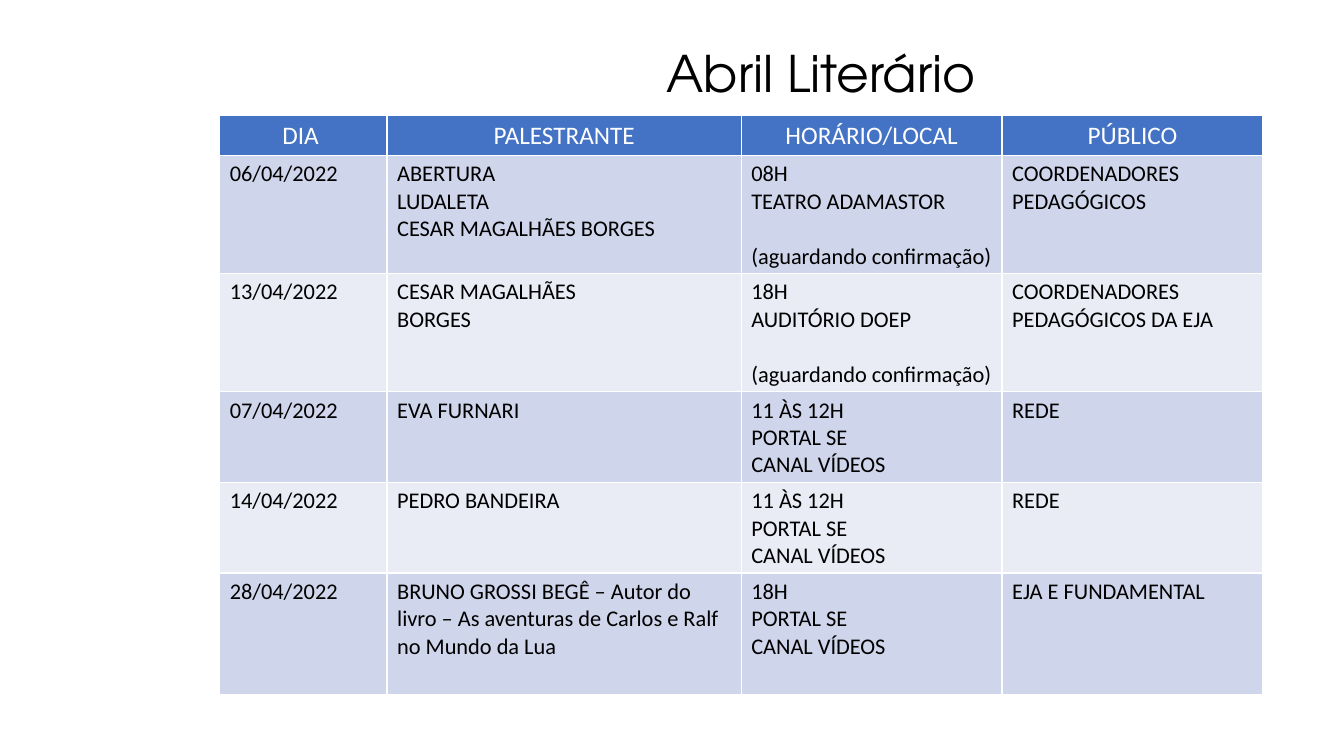
from dataclasses import dataclass

from lxml.etree import SubElement
from pptx import Presentation
from pptx.dml.color import RGBColor
from pptx.enum.text import MSO_ANCHOR, PP_ALIGN
from pptx.oxml.ns import qn
from pptx.util import Pt


@dataclass(frozen=True)
class Theme:
    title_font: str = "TeX Gyre Adventor"
    table_font: str = "Calibri"
    title_size: float = 36
    header_size: float = 18
    body_size: float = 16
    line_height: float = 19.5
    border_width: float = 1
    text: str = "000000"
    white: str = "FFFFFF"
    header_fill: str = "4472C4"
    band_fills: tuple = ("CFD5EA", "E9EBF5")


theme = Theme()


def add_text(paragraph, text, font_name, size, color):
    run = paragraph.add_run()
    run.text = text
    run.font.name = font_name
    run.font.size = Pt(size)
    run.font.bold = False
    run.font.color.rgb = RGBColor.from_string(color)


def set_borders(cell, color, width):
    properties = cell._tc.get_or_add_tcPr()
    for tag in ("a:lnL", "a:lnR", "a:lnT", "a:lnB"):
        line = SubElement(properties, qn(tag), w=str(Pt(width)))
        fill = SubElement(line, qn("a:solidFill"))
        SubElement(fill, qn("a:srgbClr"), val=color)


presentation = Presentation()
presentation.slide_width = Pt(960)
presentation.slide_height = Pt(540)
slide = presentation.slides.add_slide(presentation.slide_layouts[6])

# Title
title = slide.shapes.add_textbox(Pt(437), Pt(26.6), Pt(299), Pt(51))
title.text_frame.word_wrap = True
paragraph = title.text_frame.paragraphs[0]
paragraph.alignment = PP_ALIGN.CENTER
add_text(paragraph, "Abril Literário", theme.title_font, theme.title_size, theme.text)

# Schedule: each cell is a list of paragraphs
pending = "(aguardando confirmação)"
online = ["PORTAL SE", "CANAL VÍDEOS"]
schedule = [
    [["DIA "], ["PALESTRANTE"], ["HORÁRIO/LOCAL"], ["PÚBLICO"]],
    [["06/04/2022"], ["ABERTURA", "LUDALETA", "CESAR MAGALHÃES BORGES"],
     ["08H", "TEATRO ADAMASTOR", pending], ["COORDENADORES", "PEDAGÓGICOS"]],
    [["13/04/2022"], ["CESAR MAGALHÃES", "BORGES"],
     ["18H", "AUDITÓRIO DOEP", pending], ["COORDENADORES PEDAGÓGICOS DA EJA"]],
    [["07/04/2022"], ["EVA FURNARI"], ["11 ÀS 12H", *online], ["REDE"]],
    [["14/04/2022"], ["PEDRO BANDEIRA"], ["11 ÀS 12H", *online], ["REDE"]],
    [["28/04/2022"],
     ["BRUNO GROSSI BEGÊ – Autor do livro – As aventuras de Carlos e Ralf no Mundo da Lua"],
     ["18H", *online], ["EJA E FUNDAMENTAL"]],
]
column_widths = [119.5, 253, 186.3, 186.3]
row_heights = [28, 84, 84, 64.8, 64.8, 87]

# Table grid
table = slide.shapes.add_table(
    len(row_heights), len(column_widths), Pt(157), Pt(82.3),
    Pt(sum(column_widths)), Pt(sum(row_heights))).table
for column, width in zip(table.columns, column_widths):
    column.width = Pt(width)
for row, height in zip(table.rows, row_heights):
    row.height = Pt(height)

# Table cells
for row_index, row_texts in enumerate(schedule):
    is_header = row_index == 0
    fill = theme.header_fill if is_header else theme.band_fills[(row_index - 1) % 2]
    size = theme.header_size if is_header else theme.body_size
    color = theme.white if is_header else theme.text
    for column_index, lines in enumerate(row_texts):
        cell = table.cell(row_index, column_index)
        set_borders(cell, theme.white, theme.border_width)
        cell.fill.solid()
        cell.fill.fore_color.rgb = RGBColor.from_string(fill)
        cell.vertical_anchor = MSO_ANCHOR.MIDDLE if is_header else MSO_ANCHOR.TOP
        for line_index, text in enumerate(lines):
            frame = cell.text_frame
            paragraph = frame.add_paragraph() if line_index else frame.paragraphs[0]
            paragraph.alignment = PP_ALIGN.CENTER if is_header else PP_ALIGN.LEFT
            if text == pending:
                paragraph.space_before = Pt(theme.line_height)
            add_text(paragraph, text, theme.table_font, size, color)

presentation.save("out.pptx")
